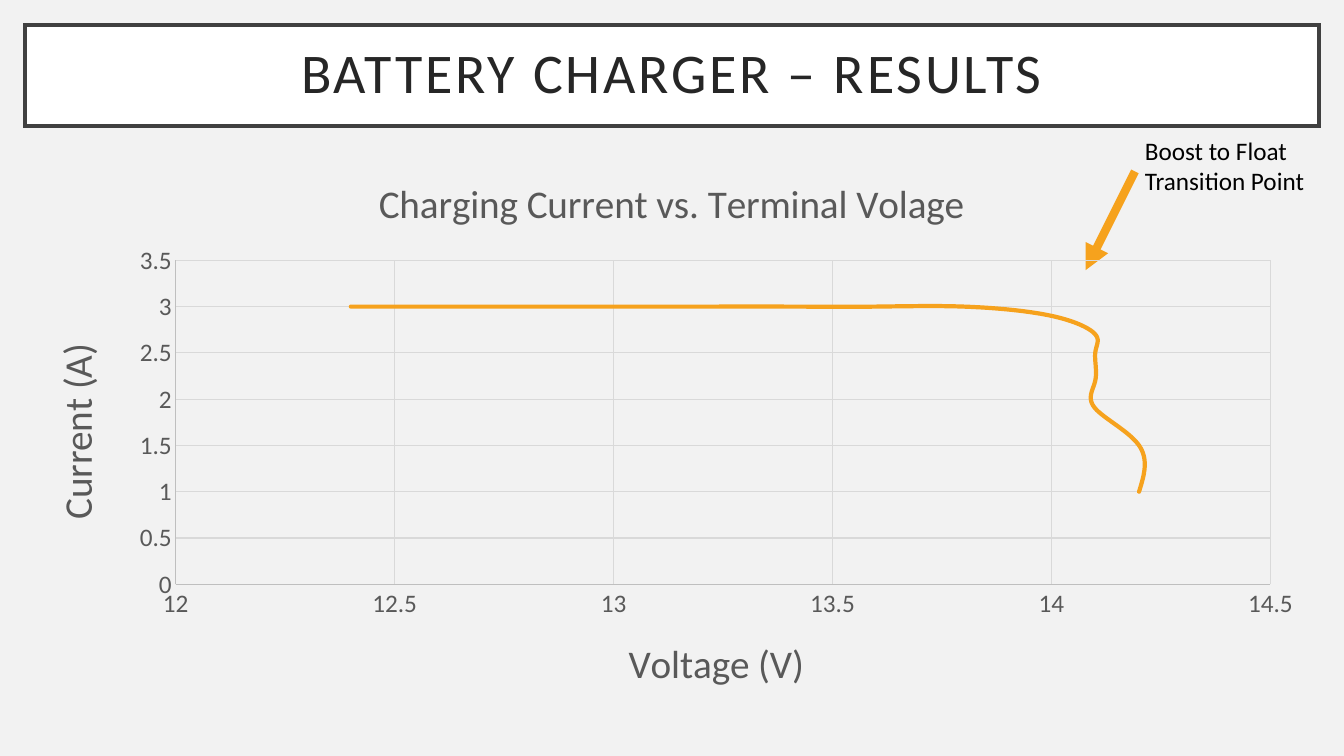
from dataclasses import dataclass

from lxml import etree
from pptx import Presentation
from pptx.chart.data import XyChartData
from pptx.dml.color import RGBColor
from pptx.enum.chart import XL_CHART_TYPE, XL_TICK_MARK
from pptx.enum.shapes import MSO_CONNECTOR
from pptx.enum.text import MSO_ANCHOR, MSO_AUTO_SIZE, PP_ALIGN
from pptx.oxml.ns import qn
from pptx.util import Pt

SMOOTH_SCATTER = XL_CHART_TYPE.XY_SCATTER_SMOOTH_NO_MARKERS
NO_TICKS = XL_TICK_MARK.NONE
STRAIGHT = MSO_CONNECTOR.STRAIGHT
MIDDLE = MSO_ANCHOR.MIDDLE
GROW = MSO_AUTO_SIZE.SHAPE_TO_FIT_TEXT
LEFT, CENTER = PP_ALIGN.LEFT, PP_ALIGN.CENTER


@dataclass(frozen=True)
class Theme:
    font: str = "Calibri"
    backdrop: RGBColor = RGBColor(0xF2, 0xF2, 0xF2)
    white: RGBColor = RGBColor(0xFF, 0xFF, 0xFF)
    black: RGBColor = RGBColor(0, 0, 0)
    frame: RGBColor = RGBColor(0x40, 0x40, 0x40)
    heading: RGBColor = RGBColor(0x26, 0x26, 0x26)
    label: RGBColor = RGBColor(0x59, 0x59, 0x59)
    axis: RGBColor = RGBColor(0xBF, 0xBF, 0xBF)
    grid: RGBColor = RGBColor(0xD9, 0xD9, 0xD9)
    accent: RGBColor = RGBColor(0xF6, 0xA2, 0x1D)
    title_size: int = 40
    chart_title_size: int = 28
    text_size: int = 18


THEME = Theme()
CHART_LEFT, CHART_TOP, CHART_WIDTH, CHART_HEIGHT = 18, 114.5, 924, 398


def write(frame, text, size, color, align=LEFT, line_spacing=None, tracking=None):
    para = frame.paragraphs[0]
    para.alignment = align
    if line_spacing:
        para.line_spacing = line_spacing
    span = para.add_run()
    span.text = text
    span.font.name = THEME.font
    span.font.size = Pt(size)
    span.font.bold = False
    span.font.color.rgb = color
    if tracking:
        span.font._element.set("spc", str(tracking * 100))


def place(part, index, left, top, width=None, height=None):
    """Fix a chart part at page points, with its layout as child number index."""
    for old in part.findall(qn("c:layout")):
        part.remove(old)
    layout = etree.Element(qn("c:layout"))
    manual = etree.SubElement(layout, qn("c:manualLayout"))
    settings = {"xMode": "edge", "yMode": "edge",
                "x": (left - CHART_LEFT) / CHART_WIDTH,
                "y": (top - CHART_TOP) / CHART_HEIGHT}
    if width:
        settings = {"layoutTarget": "inner", **settings,
                    "w": width / CHART_WIDTH, "h": height / CHART_HEIGHT}
    for name, value in settings.items():
        etree.SubElement(manual, qn(f"c:{name}")).set("val", str(value))
    part.insert(index, layout)


deck = Presentation()
deck.slide_width, deck.slide_height = Pt(960), Pt(540)
page = deck.slides.add_slide(deck.slide_layouts.get_by_name("Title Only"))
page.background.fill.solid()
page.background.fill.fore_color.rgb = THEME.backdrop

# Title
title = page.shapes.title
title.left, title.top, title.width, title.height = Pt(18), Pt(18), Pt(924), Pt(72)
title.fill.solid()
title.fill.fore_color.rgb = THEME.white
title.line.color.rgb = THEME.frame
title.line.width = Pt(2.5)
etree.SubElement(title.line._get_or_add_ln(), qn("a:miter")).set("lim", "800000")
heading = title.text_frame
heading.vertical_anchor = MIDDLE
heading.margin_left = heading.margin_right = Pt(14.4)
heading.margin_top = heading.margin_bottom = Pt(14.4)
write(heading, "BATTERY CHARGER – RESULTS", THEME.title_size, THEME.heading,
      align=CENTER, line_spacing=0.9, tracking=2)

# Callout arrow and label
arrow = page.shapes.add_connector(STRAIGHT, Pt(810.7), Pt(122.4), Pt(775.4), Pt(193))
arrow.line.color.rgb = THEME.accent
arrow.line.width = Pt(6)
etree.SubElement(arrow.line._get_or_add_ln(), qn("a:tailEnd")).set("type", "triangle")
etree.SubElement(arrow._element.spPr, qn("a:effectLst"))

callout = page.shapes.add_textbox(Pt(810.7), Pt(92.9), Pt(146.2), Pt(51)).text_frame
callout.word_wrap = True
callout.auto_size = GROW
write(callout, "Boost to Float Transition Point", THEME.text_size, THEME.black)

# Chart
readings = [
    (12.4, 3), (12.6, 3), (12.8, 3), (13, 3), (13.2, 3), (13.4, 3),
    (13.6, 3), (13.8, 3), (14, 2.9), (14, 2.9), (14, 2.9), (14.1, 2.7),
    (14.1, 2.5), (14.1, 2.5), (14.1, 2.2), (14.1, 1.9), (14.2, 1.5), (14.2, 1),
]
chart_data = XyChartData()
current = chart_data.add_series("Series 1")
for volts, amps in readings:
    current.add_data_point(volts, amps)
chart = page.shapes.add_chart(SMOOTH_SCATTER, Pt(CHART_LEFT), Pt(CHART_TOP),
                              Pt(CHART_WIDTH), Pt(CHART_HEIGHT), chart_data).chart
chart.has_legend = False
chart.font.name = THEME.font
chart.font.size = Pt(THEME.text_size)
chart.font.color.rgb = THEME.label
chart.plots[0].vary_by_categories = False
curve = chart.plots[0].series[0]
curve._element.find(qn("c:smooth")).set("val", "1")
curve.format.line.color.rgb = THEME.accent
curve.format.line.width = Pt(3)
stroke = curve.format.line._get_or_add_ln()
stroke.set("cap", "rnd")
etree.SubElement(stroke, qn("a:round"))

axes = [(chart.category_axis, 12, 14.5), (chart.value_axis, 0, 3.5)]
for axis, low, high in axes:
    axis.minimum_scale, axis.maximum_scale, axis.major_unit = low, high, 0.5
    axis.major_tick_mark = axis.minor_tick_mark = NO_TICKS
    axis.has_major_gridlines = True
    for line, color in ((axis.format.line, THEME.axis),
                        (axis.major_gridlines.format.line, THEME.grid)):
        line.color.rgb = color
        line.width = Pt(0.75)

captions = [
    (chart.chart_title, "Charging Current vs. Terminal Volage", 265.5, 121.5),
    (chart.category_axis.axis_title, "Voltage (V)", 444, 450),
    (chart.value_axis.axis_title, "Current (A)", 31, 240.5),
]
for caption, text, left, top in captions:
    write(caption.text_frame, text, THEME.chart_title_size, THEME.label, align=CENTER)
    place(caption._element, 1, left, top)
current_title = chart.value_axis.axis_title.text_frame
current_title._element.find(qn("a:bodyPr")).set("rot", "-5400000")
place(chart._chartSpace.chart.plotArea, 0, 125.5, 186, width=782, height=231.5)

deck.save("out.pptx")
